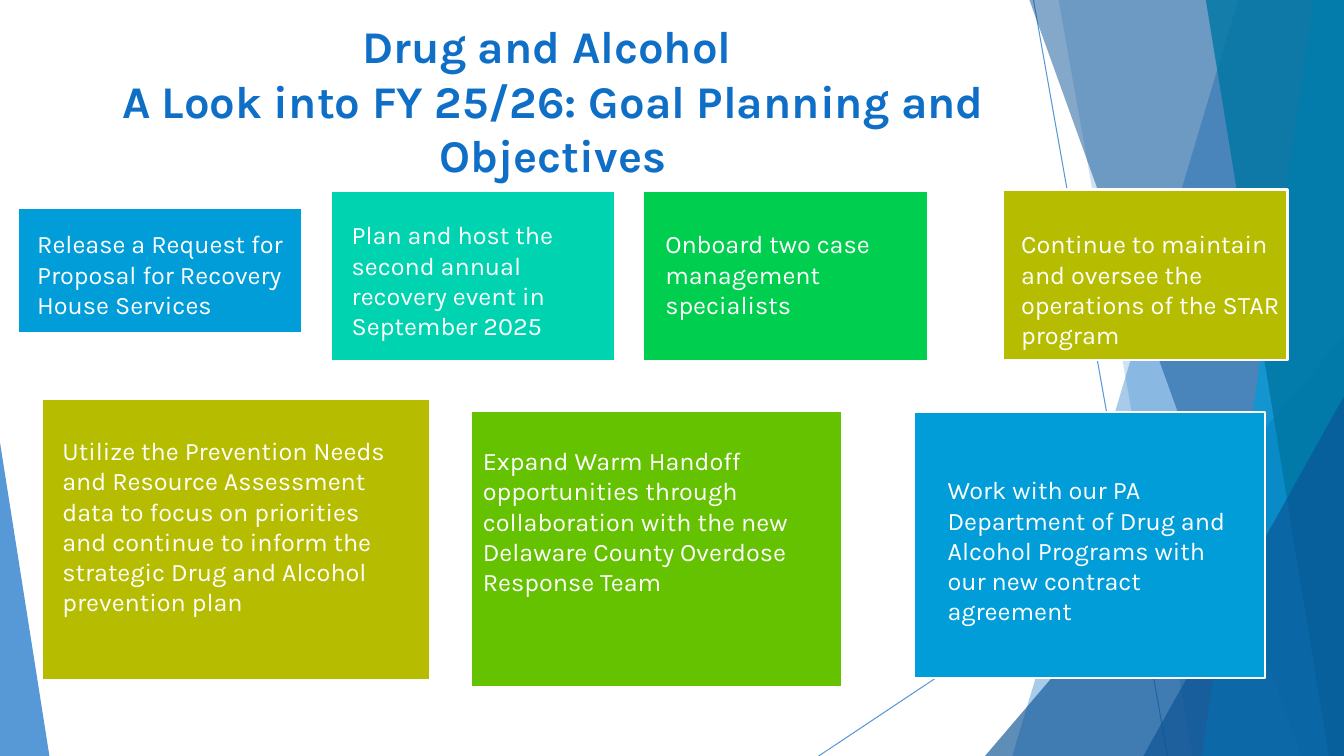
from lxml.etree import SubElement as Sub
from pptx import Presentation
from pptx.dml.color import RGBColor as RGB
from pptx.enum.shapes import MSO_CONNECTOR as Link, MSO_SHAPE as Kind
from pptx.enum.text import MSO_ANCHOR as Anchor, MSO_AUTO_SIZE as Fit, PP_ALIGN as Align
from pptx.oxml import parse_xml
from pptx.oxml.ns import nsdecls, qn
from pptx.util import Inches, Pt

WHITE = RGB(0xFF, 0xFF, 0xFF)
BLUE = RGB(0x0F, 0x6F, 0xC6)
NAVY = RGB(0x0B, 0x53, 0x94)
SKY = RGB(0x00, 0x9D, 0xD9)
DEEP = RGB(0x00, 0x76, 0xA3)
TEAL = RGB(0x00, 0xD3, 0xAF)
GREEN = RGB(0x00, 0xCE, 0x4E)
LEAF = RGB(0x64, 0xC2, 0x00)
OLIVE = RGB(0xB6, 0xBD, 0x00)
WIDE, HIGH = 13.33, 7.5


class Deck:
    font = "Karla"

    def __init__(self):
        self.show = Presentation()
        self.show.slide_width = Inches(WIDE)
        self.show.slide_height = Inches(HIGH)
        self.slide = self.show.slides.add_slide(self.show.slide_layouts[5])
        self.shapes = self.slide.shapes

    def fade(self, part, alpha):
        color = next(part.iter(qn("a:srgbClr")))
        Sub(color, qn("a:alpha")).set("val", str(alpha * 1000))

    def paint(self, shape, color, alpha):
        shape.shadow.inherit = False
        shape.fill.solid()
        shape.fill.fore_color.rgb = color
        shape.line.fill.background()
        self.fade(shape.element.spPr, alpha)

    def line(self, *ends):
        rule = self.shapes.add_connector(Link.STRAIGHT, *map(Inches, ends))
        rule.line.color.rgb = BLUE
        rule.line.width = Pt(0.75)
        self.fade(rule.element.spPr, 70)
        Sub(rule.element.spPr, qn("a:effectLst"))

    def band(self, top, base, color, alpha):
        """Full-height strip from a slanted left edge to the slide's right side."""
        pen = self.shapes.build_freeform(Inches(top), 0, scale=1.0)
        ends = [(WIDE, 0), (WIDE, HIGH), (base, HIGH)]
        pen.add_line_segments([(Inches(x), Inches(y)) for x, y in ends], close=True)
        self.paint(pen.convert_to_shape(), color, alpha)

    def wedge(self, left, top, width, tip, color, alpha):
        """Triangle that stands on the slide's bottom edge."""
        area = map(Inches, (left, top, width, HIGH - top))
        shape = self.shapes.add_shape(Kind.ISOSCELES_TRIANGLE, *area)
        shape.adjustments[0] = tip
        self.paint(shape, color, alpha)

    def card(self, area, color):
        shape = self.shapes.add_shape(Kind.RECTANGLE, *map(Inches, area))
        shape.shadow.inherit = False
        shape.fill.solid()
        shape.fill.fore_color.rgb = color
        shape.line.color.rgb = WHITE
        shape.line.width = Pt(1.5)

    def run(self, para, text, size, color, bold=False):
        run = para.add_run()
        run.text = text
        run.font.name = self.font
        run.font.size = Pt(size)
        run.font.color.rgb = color
        run.font.bold = bold
        return run

    def note(self, area, text):
        frame = self.shapes.add_textbox(*map(Inches, area)).text_frame
        frame.word_wrap = True
        frame.auto_size = Fit.SHAPE_TO_FIT_TEXT
        self.run(frame.paragraphs[0], text, 18, WHITE)

    def title(self, area, lines):
        head = self.shapes.title
        head.left, head.top, head.width, head.height = map(Inches, area)
        # Bring the title in front of the backdrop
        self.shapes.element.append(head.element)
        frame = head.text_frame
        frame.word_wrap = True
        frame.auto_size = Fit.NONE
        frame.vertical_anchor = Anchor.MIDDLE
        para = frame.paragraphs[0]
        para.alignment = Align.CENTER
        for i, text in enumerate(lines):
            if i:
                para.add_line_break()
            run = self.run(para, text, 32.4, BLUE, True)
            edge = parse_xml(
                f'<a:ln {nsdecls("a")} w="{Pt(0.83)}"><a:solidFill>'
                f'<a:srgbClr val="{WHITE}"/></a:solidFill></a:ln>')
            run.font._element.insert(0, edge) if hasattr(run.font, "_element") \
                else run._r.get_or_add_rPr().insert(0, edge)


BANDS = [(12.28, 10.04, BLUE, 36), (10.5, 11.83, BLUE, 20)]
FRONT = [(10.21, 12.91, NAVY, 50), (13.03, 11.92, SKY, 70), (11.96, 13.18, DEEP, 80)]

# Card area, card colour, text area, text
GOALS = [
    ((0.18, 2.06, 2.82, 1.24), SKY, (0.27, 2.22, 2.8, 1.01),
     "Release a Request for Proposal for Recovery House Services"),
    ((3.28, 1.89, 2.82, 1.69), TEAL, (3.39, 2.13, 2.8, 1.31),
     "Plan and host the second annual recovery event in September 2025"),
    ((6.38, 1.89, 2.82, 1.69), GREEN, (6.5, 2.22, 2.39, 1.01),
     "Onboard two case management specialists"),
    ((9.95, 1.88, 2.82, 1.69), OLIVE, (10.03, 2.22, 2.8, 1.31),
     "Continue to maintain and oversee the operations of the STAR program"),
    ((0.42, 3.96, 3.85, 2.79), OLIVE, (0.52, 4.27, 3.61, 2.22),
     "Utilize the Prevention Needs and Resource Assessment data to focus on "
     "priorities and continue to inform the strategic Drug and Alcohol prevention plan"),
    ((4.67, 4.08, 3.68, 2.74), LEAF, (4.69, 4.37, 3.61, 1.62),
     "Expand Warm Handoff opportunities through collaboration with the new "
     "Delaware County Overdose Response Team"),
    ((9.06, 4.09, 3.49, 2.64), SKY, (9.3, 4.66, 2.97, 1.62),
     "Work with our PA Department of Drug and Alcohol Programs with our new "
     "contract agreement"),
]


def main():
    deck = Deck()

    # Backdrop of slanted facets
    deck.line(10.25, 0, 11.58, HIGH)
    deck.line(WIDE, 4.03, 8.12, HIGH)
    for band in BANDS:
        deck.band(*band)
    deck.wedge(9.77, 3.33, 3.56, 1, NAVY, 66)
    for band in FRONT:
        deck.band(*band)
    deck.wedge(11.34, 3.93, 1.99, 1, NAVY, 66)
    deck.wedge(0, 4.39, 0.49, 0, BLUE, 70)

    # Title
    deck.title((0.18, 0.13, 10.61, 1.73),
               ["Drug and Alcohol ", "A Look into FY 25/26: Goal Planning and Objectives"])

    # Goal cards, then their texts
    for area, color, _, _ in GOALS:
        deck.card(area, color)
    for _, _, area, text in GOALS:
        deck.note(area, text)

    deck.show.save("out.pptx")


if __name__ == "__main__":
    main()
